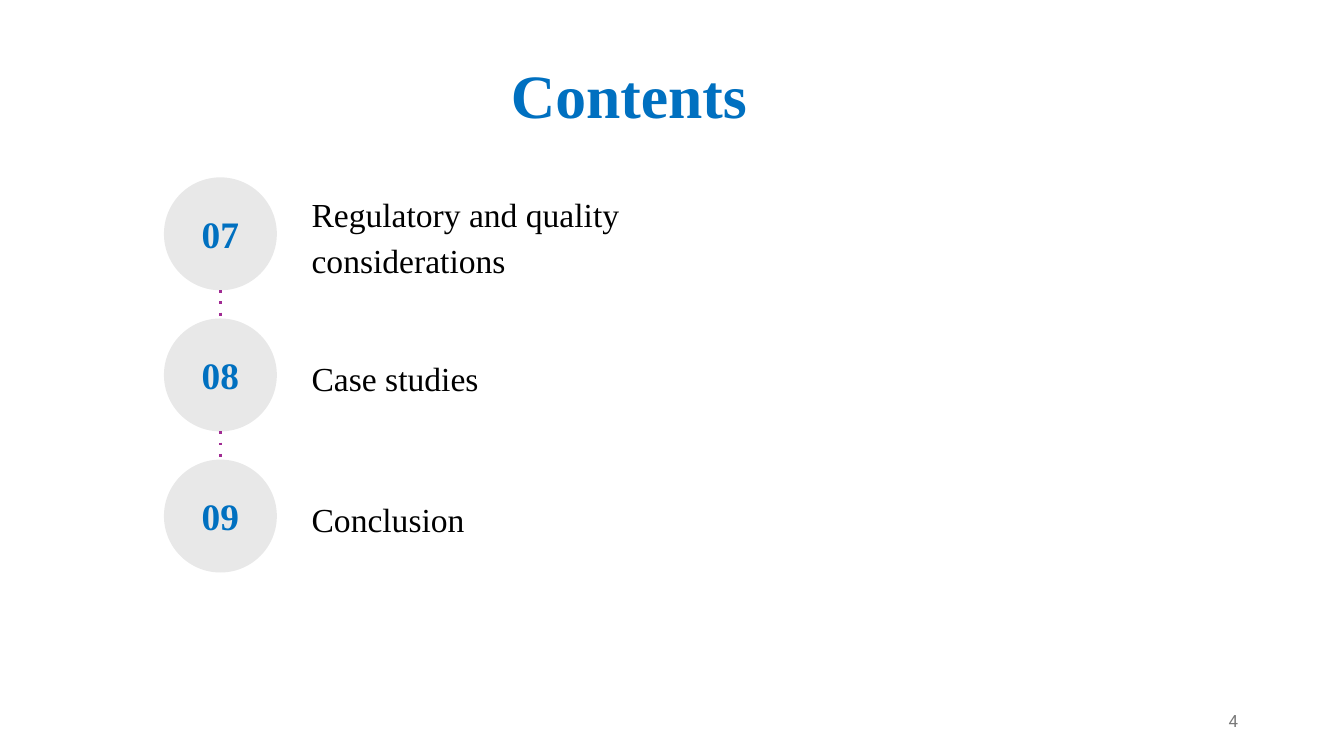
from lxml.etree import SubElement
from pptx import Presentation
from pptx.dml.color import RGBColor
from pptx.enum.shapes import MSO_CONNECTOR, MSO_SHAPE
from pptx.enum.text import MSO_ANCHOR, PP_ALIGN
from pptx.oxml.ns import qn
from pptx.util import Inches, Pt

SERIF = "Times New Roman"
BLUE = "0070C0"
ITEMS = [
    ("07", "Regulatory and quality considerations"),
    ("08", "Case studies"),
    ("09", "Conclusion"),
]
FIRST_TOP = 1.32
PITCH = 1.05
DIAMETER = 0.84
CIRCLE_LEFT = 1.22
LABEL_LEFT = 2.22


def color(value):
    """Turn a hex string into a colour."""
    return RGBColor.from_string(value)


def write_text(shape, text, size, font_color, font_name=SERIF, bold=False,
               align=PP_ALIGN.LEFT, anchor=MSO_ANCHOR.MIDDLE, spacing=None):
    """Fill a shape with one formatted paragraph."""
    frame = shape.text_frame
    frame.word_wrap = True
    frame.vertical_anchor = anchor
    frame.margin_left = frame.margin_right = Inches(0.1)
    frame.margin_top = frame.margin_bottom = Inches(0.1)
    frame.text = text
    paragraph = frame.paragraphs[0]
    paragraph.alignment = align
    paragraph.line_spacing = spacing
    paragraph.font.name = font_name
    paragraph.font.size = Pt(size)
    paragraph.font.bold = bold
    paragraph.font.color.rgb = color(font_color)


def add_title(slide, text):
    """Place and format the slide title."""
    title = slide.shapes.title
    title.left, title.top = Inches(0.37), Inches(0.24)
    title.width, title.height = Inches(8.62), Inches(1.09)
    write_text(title, text, 33, BLUE, bold=True, align=PP_ALIGN.CENTER,
               anchor=MSO_ANCHOR.TOP, spacing=1.15)


def add_label(slide, text, top):
    """Add the wording of one contents item."""
    label = slide.shapes.add_textbox(
        Inches(LABEL_LEFT), Inches(top), Inches(2.71), Inches(DIAMETER))
    write_text(label, text, 18, "000000", spacing=1.15)


def add_number_circle(slide, number, top):
    """Add the numbered circle of one contents item."""
    circle = slide.shapes.add_shape(
        MSO_SHAPE.OVAL, Inches(CIRCLE_LEFT), Inches(top),
        Inches(DIAMETER), Inches(DIAMETER))
    circle.shadow.inherit = False
    circle.fill.solid()
    circle.fill.fore_color.rgb = color("E8E8E8")
    circle.line.fill.background()
    write_text(circle, number, 20, BLUE, bold=True, align=PP_ALIGN.CENTER)


def add_dotted_link(slide, top, bottom):
    """Join two neighbouring circles with a dotted line."""
    center = Inches(CIRCLE_LEFT + DIAMETER / 2)
    link = slide.shapes.add_connector(
        MSO_CONNECTOR.STRAIGHT, center, Inches(top), center, Inches(bottom))
    link.line.color.rgb = color("A02B93")
    link.line.width = Pt(1.5)
    properties = link._element.spPr
    SubElement(properties.find(qn("a:ln")), qn("a:prstDash"), val="dot")
    SubElement(properties, qn("a:effectLst"))


def add_page_number(slide, number):
    """Add the page number at the bottom right."""
    box = slide.shapes.add_textbox(
        Inches(7.06), Inches(5.21), Inches(2.25), Inches(0.3))
    write_text(box, number, 9, "797979", font_name="Roboto", align=PP_ALIGN.RIGHT)


def main():
    """Build the contents slide."""
    presentation = Presentation()
    presentation.slide_width = Inches(10)
    presentation.slide_height = Inches(10 * 9 / 16)
    slide = presentation.slides.add_slide(presentation.slide_layouts[5])
    add_page_number(slide, "4")
    add_title(slide, "Contents")
    for index, (number, text) in enumerate(ITEMS):
        top = FIRST_TOP + index * PITCH
        add_label(slide, text, top)
        add_number_circle(slide, number, top)
        if index < len(ITEMS) - 1:
            add_dotted_link(slide, top + DIAMETER, top + PITCH)
    presentation.save("out.pptx")


if __name__ == "__main__":
    main()
